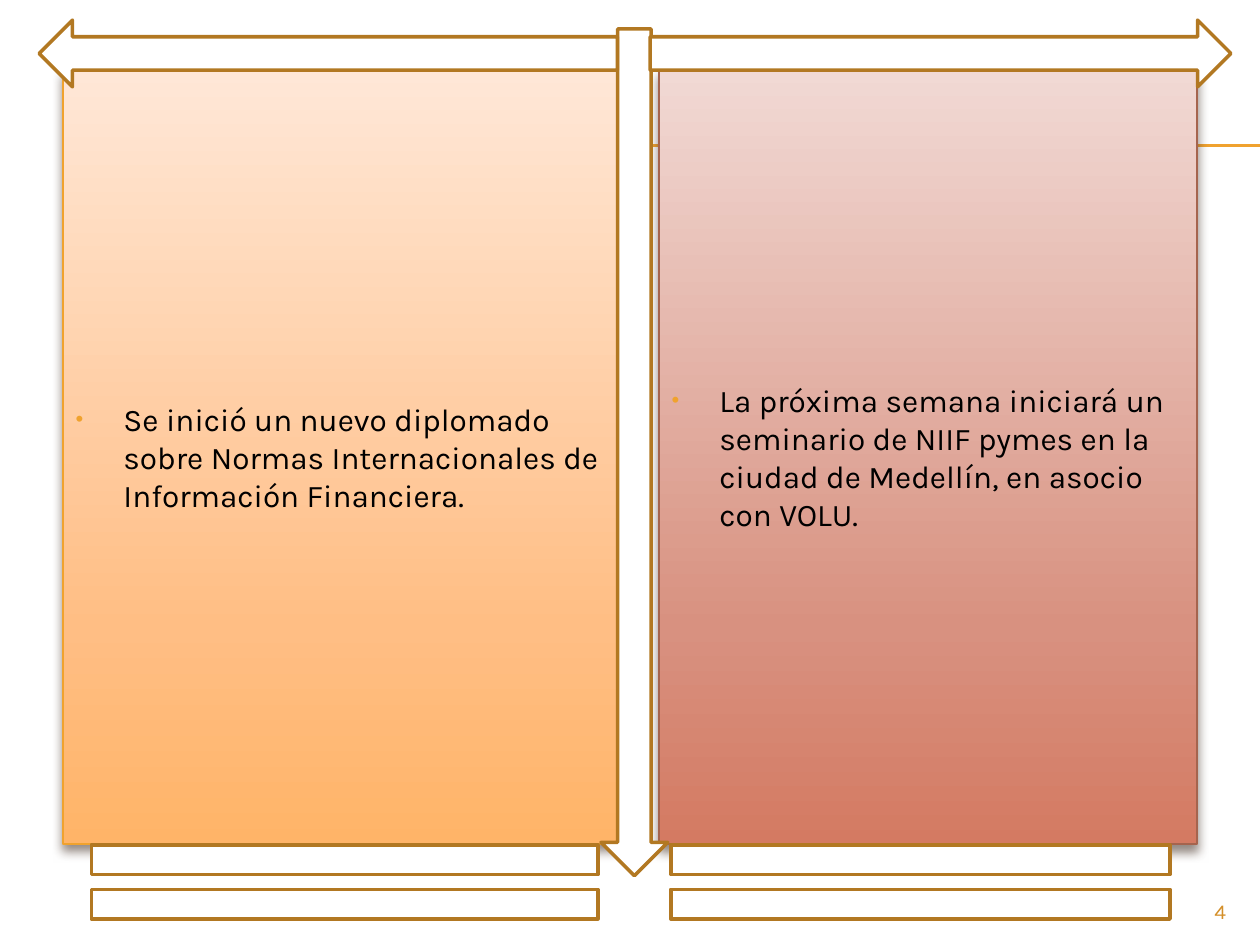
from lxml import etree
from pptx import Presentation
from pptx import util as u
from pptx.dml.color import RGBColor
from pptx.enum import shapes, text
from pptx.oxml import ns

W, H = 10, 7.5
FONT = "Karla"
WHITE = RGBColor(0xFF, 0xFF, 0xFF)
BLACK = RGBColor(0, 0, 0)
AMBER = RGBColor(0xF0, 0xA2, 0x2E)
BRONZE = RGBColor(0xB2, 0x78, 0x22)
GOLD = RGBColor(0xD4, 0x8F, 0x29)
RUST = RGBColor(0xA5, 0x64, 0x4E)
BROWN = RGBColor(0x4E, 0x3B, 0x30)
ORANGE_STOPS = [(0, RGBColor(0xFF, 0xE7, 0xD7)), (72, RGBColor(0xFF, 0xBE, 0x84)),
                (100, RGBColor(0xFF, 0xB4, 0x68))]
RED_STOPS = [(0, RGBColor(0xF1, 0xD9, 0xD4)), (72, RGBColor(0xD8, 0x91, 0x80)),
             (100, RGBColor(0xD4, 0x7A, 0x62))]

# Vertical bands shared by matching pieces: top, height
PANEL, SIDE_ARROW, EQUAL = (0.55, 6.15), (0.16, 0.53), (6.5, 1)


def add(parent, tag, **attrs):
    return etree.SubElement(parent, ns.qn(tag), {k: str(v) for k, v in attrs.items()})


def add_color(parent, color):
    return add(parent, "a:srgbClr", val=color)


def set_line(sp, color, width):
    sp.line.color.rgb = color
    sp.line.width = u.Pt(width)


def style_run(p, content, size, color):
    r = p.add_run()
    r.text = content
    for name, value in {"name": FONT, "size": u.Pt(size)}.items():
        setattr(r.font, name, value)
    r.font.color.rgb = color


def add_rule(s, y):
    c = s.shapes.add_connector(shapes.MSO_CONNECTOR.STRAIGHT,
                               u.Inches(0.56), u.Inches(y), u.Inches(W), u.Inches(y))
    set_line(c, AMBER, 0.75)
    add(c._element.spPr, "a:effectLst")
    s.shapes._spTree.insert(2, c._element)  # behind the panels


def set_gradient(sp, stops):
    sp.fill.gradient()
    sp.fill.gradient_angle = 270
    gs_list = sp._element.spPr.find(ns.qn("a:gradFill")).find(ns.qn("a:gsLst"))
    for old in list(gs_list):
        gs_list.remove(old)
    for pos, color in stops:
        add_color(add(gs_list, "a:gs", pos=pos * 1000), color)


def set_shadow(sp):
    effects = add(sp._element.spPr, "a:effectLst")
    shadow = add(effects, "a:outerShdw", blurRad=u.Pt(6), dist=u.Pt(4),
                 dir=90 * 60000, rotWithShape=0)
    add(add_color(shadow, BROWN), "a:alpha", val=60000)


def set_bullet(p):
    indent = u.Inches(0.38)
    pPr = p._p.get_or_add_pPr()
    pPr.set("marL", str(indent))
    pPr.set("indent", str(-indent))
    add(add(pPr, "a:spcBef"), "a:spcPct", val=20000)
    add_color(add(pPr, "a:buClr"), AMBER)
    add(pPr, "a:buSzPct", val=70000)
    add(pPr, "a:buChar", char="•")


def fill_panel(sp, left, width, stops, border, content):
    top, height = PANEL
    for name, value in dict(left=left, top=top, width=width, height=height).items():
        setattr(sp, name, u.Inches(value))
    set_gradient(sp, stops)
    set_line(sp, border, 0.79)
    set_shadow(sp)
    tf = sp.text_frame
    for name, value in {"word_wrap": True, "auto_size": text.MSO_AUTO_SIZE.NONE,
                        "vertical_anchor": text.MSO_ANCHOR.MIDDLE}.items():
        setattr(tf, name, value)
    p = tf.paragraphs[0]
    set_bullet(p)
    style_run(p, content, 18, BLACK)


def add_outline(s, kind, left, width, band):
    top, height = band
    sp = s.shapes.add_shape(kind, *map(u.Inches, (left, top, width, height)))
    sp.shadow.inherit = False
    sp.fill.solid()
    sp.fill.fore_color.rgb = WHITE
    set_line(sp, BRONZE, 2)


def add_page_number(s, number):
    box = s.shapes.add_textbox(*map(u.Inches, (9, 7.08, 0.83, 0.27)))
    tf = box.text_frame
    tf.word_wrap = True
    p = tf.paragraphs[0]
    p.alignment = text.PP_ALIGN.RIGHT
    style_run(p, number, 12, GOLD)


def main():
    prs = Presentation()
    prs.slide_width, prs.slide_height = u.Inches(W), u.Inches(H)
    s = prs.slides.add_slide(prs.slide_layouts[3])
    title, left_body, right_body = s.placeholders
    title._element.getparent().remove(title._element)

    # Double rule behind everything
    for y in (1.15, 1.16):
        add_rule(s, y)

    # Two text panels
    fill_panel(left_body, 0.5, 4.42, ORANGE_STOPS, AMBER,
               "Se inició un nuevo diplomado sobre Normas Internacionales "
               "de Información Financiera.")
    fill_panel(right_body, 5.23, 4.27, RED_STOPS, RUST,
               "La próxima semana iniciará un seminario de NIIF pymes en la "
               "ciudad de Medellín, en asocio con VOLU.")

    # Arrow frame and equals signs
    kind = shapes.MSO_SHAPE
    add_outline(s, kind.DOWN_ARROW, 4.77, 0.53, (0.23, 6.72))
    add_outline(s, kind.RIGHT_ARROW, 5.16, 4.61, SIDE_ARROW)
    add_outline(s, kind.LEFT_ARROW, 0.31, 4.59, SIDE_ARROW)
    add_outline(s, kind.MATH_EQUAL, 0, 5.47, EQUAL)
    add_outline(s, kind.MATH_EQUAL, 4.61, 5.39, EQUAL)

    add_page_number(s, "4")
    prs.save("out.pptx")


if __name__ == "__main__":
    main()
